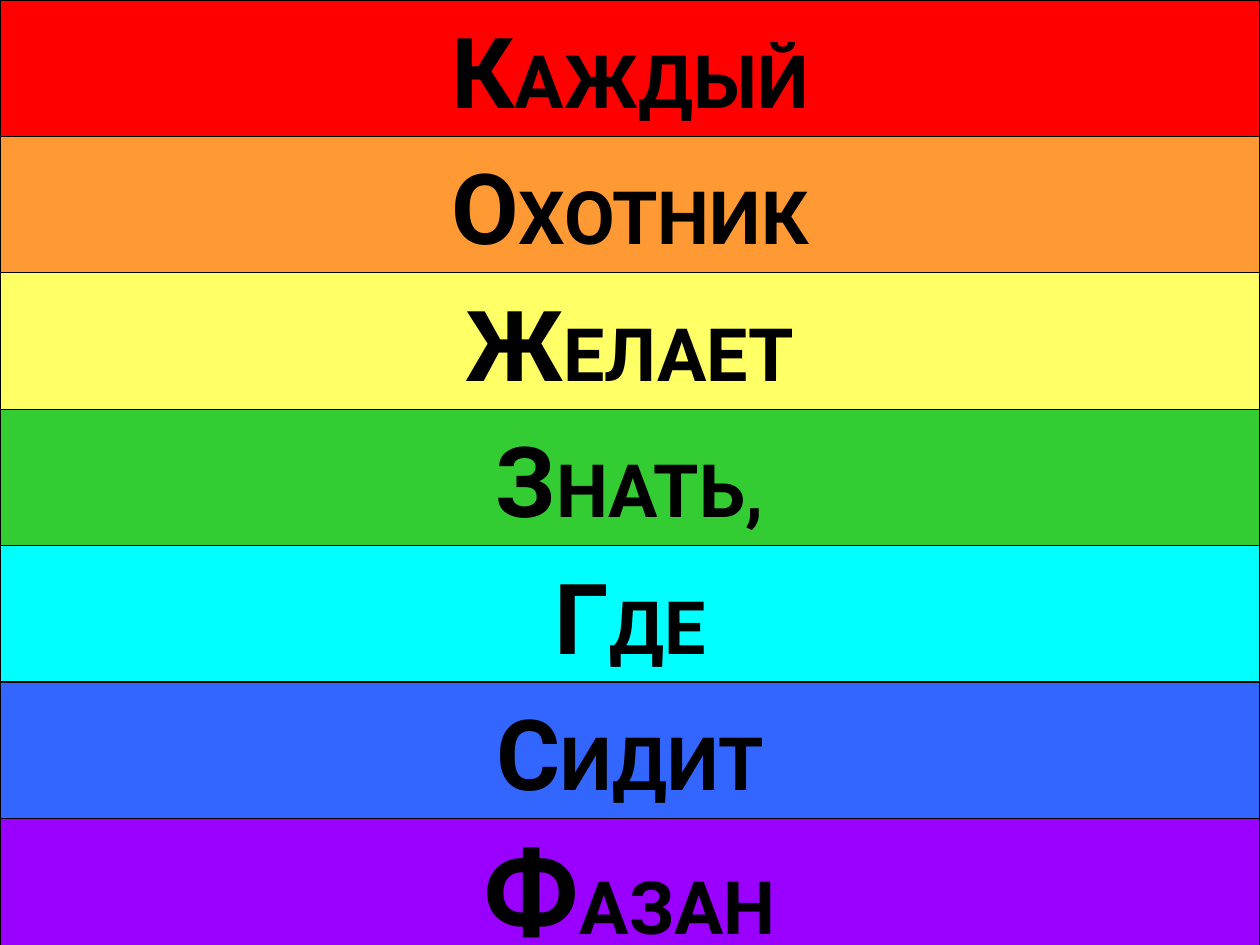
from pptx import Presentation
from pptx.dml.color import RGBColor
from pptx.enum.shapes import MSO_SHAPE
from pptx.enum.text import MSO_ANCHOR, PP_ALIGN
from pptx.util import Cm, Pt

RECT = MSO_SHAPE.RECTANGLE
MIDDLE = MSO_ANCHOR.MIDDLE
CENTER = PP_ALIGN.CENTER

BLACK = RGBColor(0x00, 0x00, 0x00)
RED = RGBColor(0xFF, 0x00, 0x00)
ORANGE = RGBColor(0xFF, 0x99, 0x33)
YELLOW = RGBColor(0xFF, 0xFF, 0x66)
GREEN = RGBColor(0x33, 0xCC, 0x33)
CYAN = RGBColor(0x00, 0xFF, 0xFF)
BLUE = RGBColor(0x33, 0x66, 0xFF)
VIOLET = RGBColor(0x99, 0x00, 0xFF)

FONT = "Roboto"
SLIDE_W, SLIDE_H = 25.4, 19.05
BAND_H, BAND_STEP = 2.79, 2.75

# Word, band colour, size of the initial
BANDS = [
    ("КАЖДЫЙ", RED, 56),
    ("ОХОТНИК", ORANGE, 56),
    ("ЖЕЛАЕТ", YELLOW, 56),
    ("ЗНАТЬ,", GREEN, 56),
    ("ГДЕ", CYAN, 56),
    ("СИДИТ", BLUE, 56),
    ("ФАЗАН", VIOLET, 67),
]


def add_text(p, text, size=42, bold=True, color=BLACK):
    r = p.add_run()
    r.text = text
    r.font.name = FONT
    r.font.size = Pt(size)
    r.font.bold = bold
    r.font.color.rgb = color


def add_band(s, top, word, color, initial_size):
    sp = s.shapes.add_shape(RECT, Cm(0), Cm(top), Cm(SLIDE_W), Cm(BAND_H))
    sp.shadow.inherit = False
    sp.fill.solid()
    sp.fill.fore_color.rgb = color
    sp.line.color.rgb = BLACK
    sp.line.width = Pt(0.75)
    tf = sp.text_frame
    tf.word_wrap = False
    tf.vertical_anchor = MIDDLE
    p = tf.paragraphs[0]
    p.alignment = CENTER
    # Large initial, then the rest of the word
    add_text(p, word[0], size=initial_size)
    add_text(p, word[1:])


def main():
    prs = Presentation()
    prs.slide_width, prs.slide_height = Cm(SLIDE_W), Cm(SLIDE_H)
    s = prs.slides.add_slide(prs.slide_layouts[6])

    # Rainbow bands from top to bottom
    for i, (word, color, initial_size) in enumerate(BANDS):
        add_band(s, i * BAND_STEP, word, color, initial_size)

    prs.save("out.pptx")


if __name__ == "__main__":
    main()
